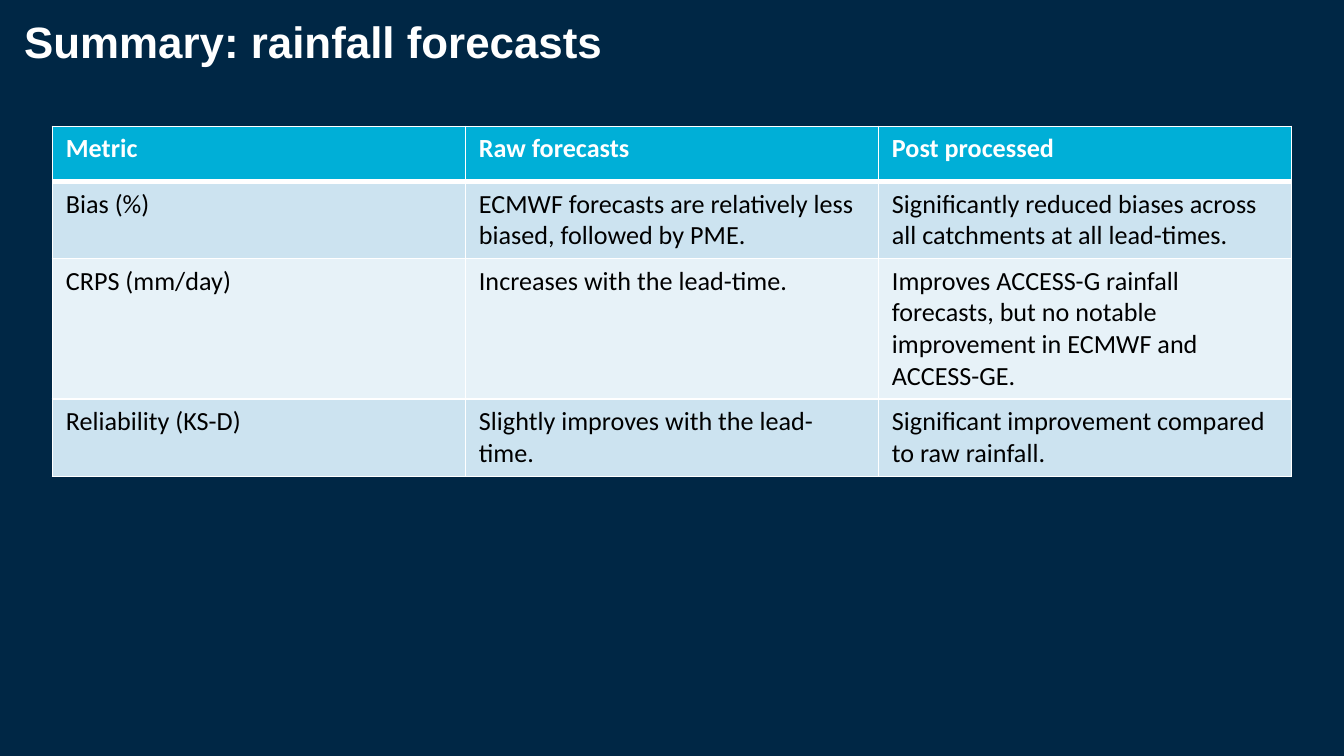
"""Build the rainfall forecast summary slide."""
from lxml import etree
from pptx import Presentation
from pptx import util as u
from pptx.dml.color import RGBColor
from pptx.enum import text
from pptx.oxml.ns import qn

COLORS = {"bg": "002745", "white": "FFFFFF", "black": "000000",
          "header": "00AFD7", "odd": "CCE3F0", "even": "E7F2F8"}
ROWS = [
    ("Metric", "Raw forecasts", "Post processed"),
    ("Bias (%)",
     "ECMWF forecasts are relatively less biased, followed by PME.",
     "Significantly reduced biases across all catchments at all lead-times."),
    ("CRPS (mm/day)",
     "Increases with the lead-time.",
     "Improves ACCESS-G rainfall forecasts, but no notable improvement in ECMWF and ACCESS-GE."),
    ("Reliability (KS-D)",
     "Slightly improves with the lead-time.",
     "Significant improvement compared to raw rainfall."),
]


def style_font(font, name, size, color, bold):
    font.name = name
    font.size = u.Pt(size)
    font.bold = bold
    font.color.rgb = RGBColor.from_string(COLORS[color])


def add_border(cell, side, width):
    ln = etree.SubElement(cell._tc.get_or_add_tcPr(), qn(f"a:ln{side}"), w=str(u.Pt(width)))
    fill = etree.SubElement(ln, qn("a:solidFill"))
    etree.SubElement(fill, qn("a:srgbClr"), val=COLORS["white"])


prs = Presentation()
prs.slide_width, prs.slide_height = u.Inches(10), u.Inches(10 * 9 / 16)
s = prs.slides.add_slide(prs.slide_layouts[5])
s.background.fill.solid()
s.background.fill.fore_color.rgb = RGBColor.from_string(COLORS["bg"])

title = s.shapes.title
title.left, title.top = u.Inches(0.18), u.Inches(0.11)
title.width, title.height = u.Inches(9.22), u.Inches(0.69)
tf = title.text_frame
tf.margin_left = tf.margin_right = tf.margin_top = tf.margin_bottom = 0
tf.vertical_anchor = text.MSO_ANCHOR.TOP
tf.auto_size = text.MSO_AUTO_SIZE.NONE
tf.text = "Summary: rainfall forecasts"
p = tf.paragraphs[0]
p.alignment = text.PP_ALIGN.LEFT
style_font(p.runs[0].font, "Arial", 23.5, "white", True)

table = s.shapes.add_table(len(ROWS), 3, u.Inches(0.39), u.Inches(0.94),
                           u.Inches(9.22), u.Inches(1.64)).table
for i, row in enumerate(ROWS):
    table.rows[i].height = u.Inches(0.41)
    header = i == 0
    fill = "header" if header else "odd" if i % 2 else "even"
    for j, value in enumerate(row):
        cell = table.cell(i, j)
        cell.text = value
        style_font(cell.text_frame.paragraphs[0].runs[0].font, "Calibri", 14,
                   "white" if header else "black", header)
        for side in "LRTB":
            thick = (header and side == "B") or (i == 1 and side == "T")
            add_border(cell, side, 3 if thick else 1)
        cell.fill.solid()
        cell.fill.fore_color.rgb = RGBColor.from_string(COLORS[fill])

prs.save("out.pptx")
